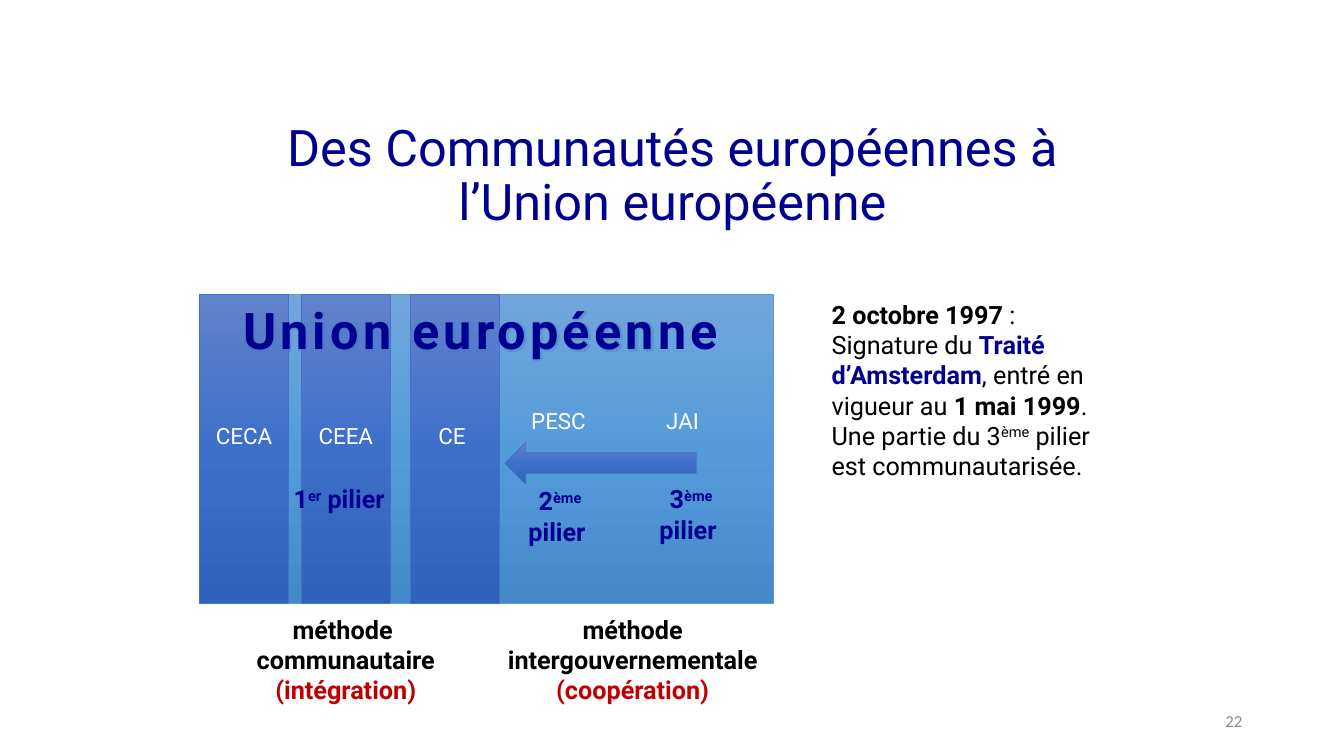
from lxml import etree
from pptx import Presentation
from pptx import util as u
from pptx.dml.color import RGBColor
from pptx.enum import shapes, text
from pptx.oxml import ns

NAVY = RGBColor(0x00, 0x00, 0x90)
BLACK = RGBColor(0x00, 0x00, 0x00)
WHITE = RGBColor(0xFF, 0xFF, 0xFF)
RED = RGBColor(0xC0, 0x00, 0x00)
GREY = RGBColor(0x8C, 0x8C, 0x8C)
UNION_LINE = RGBColor(0x5B, 0x9B, 0xD5)
PILLAR_LINE = RGBColor(0x44, 0x72, 0xC4)
UNION_FILL = ("71A6DB", "559BDB", "448ACA")
PILLAR_FILL = ("6183CB", "3E70CA", "3062BB")

FONT = "Roboto"
CENTER = text.PP_ALIGN.CENTER
LEFT = text.PP_ALIGN.LEFT
MIDDLE = text.MSO_ANCHOR.MIDDLE

# Diagram grid, in inches
TOP, HEIGHT = 2.92, 3.07
UNION_LEFT, UNION_WIDTH = 1.98, 5.69
PILLAR_WIDTH = 0.88
METHOD_TOP = 6.04


def box(*lengths):
    return [u.Inches(n) for n in lengths]


def sub(parent, tag, **attrs):
    return etree.SubElement(parent, ns.qn(tag), attrs)


def write(p, runs, size, align=CENTER, name=FONT):
    """Fill a paragraph with (words, colour, bold, superscript) runs."""
    p.alignment = align
    p.font.size = u.Pt(size)
    p.font.name = name
    for words, colour, bold, raised in runs:
        r = p.add_run()
        r.text = words
        r.font.color.rgb = colour
        r.font.bold = bold
        if raised:
            r.font._element.set("baseline", "30000")


def add_label(s, place, paragraphs, size=18, align=CENTER, wrap=True,
              anchor=text.MSO_ANCHOR.TOP, name=FONT):
    tf = s.shapes.add_textbox(*box(*place)).text_frame
    tf.word_wrap = wrap
    tf.vertical_anchor = anchor
    for i, runs in enumerate(paragraphs):
        p = tf.add_paragraph() if i else tf.paragraphs[0]
        write(p, runs, size, align, name)
    return tf


def add_block(s, kind, place, colours, line):
    """Add a shape with a three-stop vertical gradient."""
    sp = s.shapes.add_shape(kind, *box(*place))
    sp.shadow.inherit = False
    sp.line.color.rgb = line
    sp.line.width = u.Pt(0.5)
    sp.fill.gradient()
    sp.fill.gradient_angle = 270
    stops = sp.fill._fill._gradFill.find(ns.qn("a:gsLst"))
    for stop in list(stops):
        stops.remove(stop)
    for i, colour in enumerate(colours):
        stop = sub(stops, "a:gs", pos=str(i * 50000))
        sub(stop, "a:srgbClr", val=colour)
    return sp


def add_community(s, left, name):
    sp = add_block(s, shapes.MSO_SHAPE.RECTANGLE,
                   (left, TOP, PILLAR_WIDTH, HEIGHT), PILLAR_FILL, PILLAR_LINE)
    tf = sp.text_frame
    tf.vertical_anchor = MIDDLE
    tf.margin_bottom = u.Inches(0.31)
    write(tf.paragraphs[0], [(name, WHITE, False, False)], 16)


def add_pillar_label(s, place, number, suffix):
    add_label(s, place, [[(number, NAVY, True, False),
                          (suffix, NAVY, True, True),
                          (" pilier ", NAVY, True, False)]])


def add_union_name(s):
    tf = add_label(s, (1.2, TOP, 7.14, 0.71),
                   [[("Union européenne", NAVY, True, False)]], 36)
    rPr = tf.paragraphs[0].runs[0].font._element
    rPr.set("spc", "300")
    # Soft blue glow around the letters
    effects = sub(rPr, "a:effectLst")
    glow = sub(effects, "a:glow", rad="38100")
    colour = sub(glow, "a:srgbClr", val="4472C4")
    sub(colour, "a:alpha", val="40000")


def add_title(s, words):
    title = s.shapes.title
    title.left, title.top, title.width, title.height = box(2.42, 0.74, 8.5, 1.61)
    tf = title.text_frame
    tf.auto_size = text.MSO_AUTO_SIZE.NONE
    tf.vertical_anchor = text.MSO_ANCHOR.BOTTOM
    p = tf.paragraphs[0]
    p.line_spacing = 0.9
    write(p, [(words, NAVY, False, False)], 36)


def main():
    prs = Presentation()
    prs.slide_width, prs.slide_height = box(13.33, 7.5)
    s = prs.slides.add_slide(prs.slide_layouts[5])
    add_title(s, "Des Communautés européennes à l’Union européenne")

    # The Union and its three Communities
    add_block(s, shapes.MSO_SHAPE.RECTANGLE,
              (UNION_LEFT, TOP, UNION_WIDTH, HEIGHT), UNION_FILL, UNION_LINE)
    for left, name in ((UNION_LEFT, "CECA"), (2.99, "CEEA"), (4.07, "CE ")):
        add_community(s, left, name)

    # Pillars
    add_pillar_label(s, (2.28, 4.75, 2.23, 0.4), "1", "er")
    add_pillar_label(s, (4.98, 4.77, 1.15, 0.71), "2", "ème")
    add_pillar_label(s, (6.28, 4.75, 1.15, 0.71), "3", "ème")
    for left, width, name in ((5.17, 0.82, "PESC"), (6.51, 0.54, "JAI")):
        add_label(s, (left, 3.99, width, 0.37),
                  [[(name, WHITE, False, False)]], 16, LEFT, wrap=False)
    add_union_name(s)
    add_block(s, shapes.MSO_SHAPE.LEFT_ARROW, (5.01, 4.39, 1.9, 0.41),
              PILLAR_FILL, PILLAR_LINE)

    # Methods
    add_label(s, (1.85, METHOD_TOP, 3.16, 1.01),
              [[("méthode ", BLACK, True, False)],
               [("communautaire ", BLACK, True, False),
                ("(intégration)", RED, True, False)]])
    add_label(s, (4.73, METHOD_TOP, 3.09, 1.01),
              [[("méthode intergouvernementale ", BLACK, True, False),
                ("(coopération)", RED, True, False)]])

    # Treaty
    add_label(s, (8.15, TOP, 3.1, 2.52),
              [[("2 octobre 1997 ", BLACK, True, False),
                (": Signature du ", BLACK, False, False),
                ("Traité d’Amsterdam", NAVY, True, False),
                (", entré en vigueur au ", BLACK, False, False),
                ("1 mai 1999", BLACK, True, False),
                (". Une partie du 3", BLACK, False, False),
                ("ème", BLACK, False, True),
                (" pilier est communautarisée.", BLACK, False, False)]],
              align=LEFT)

    # Slide number
    add_label(s, (9.42, 6.95, 3, 0.4), [[("22", GREY, False, False)]], 12,
              text.PP_ALIGN.RIGHT, anchor=MIDDLE, name="Calibri")
    prs.save("out.pptx")


if __name__ == "__main__":
    main()
